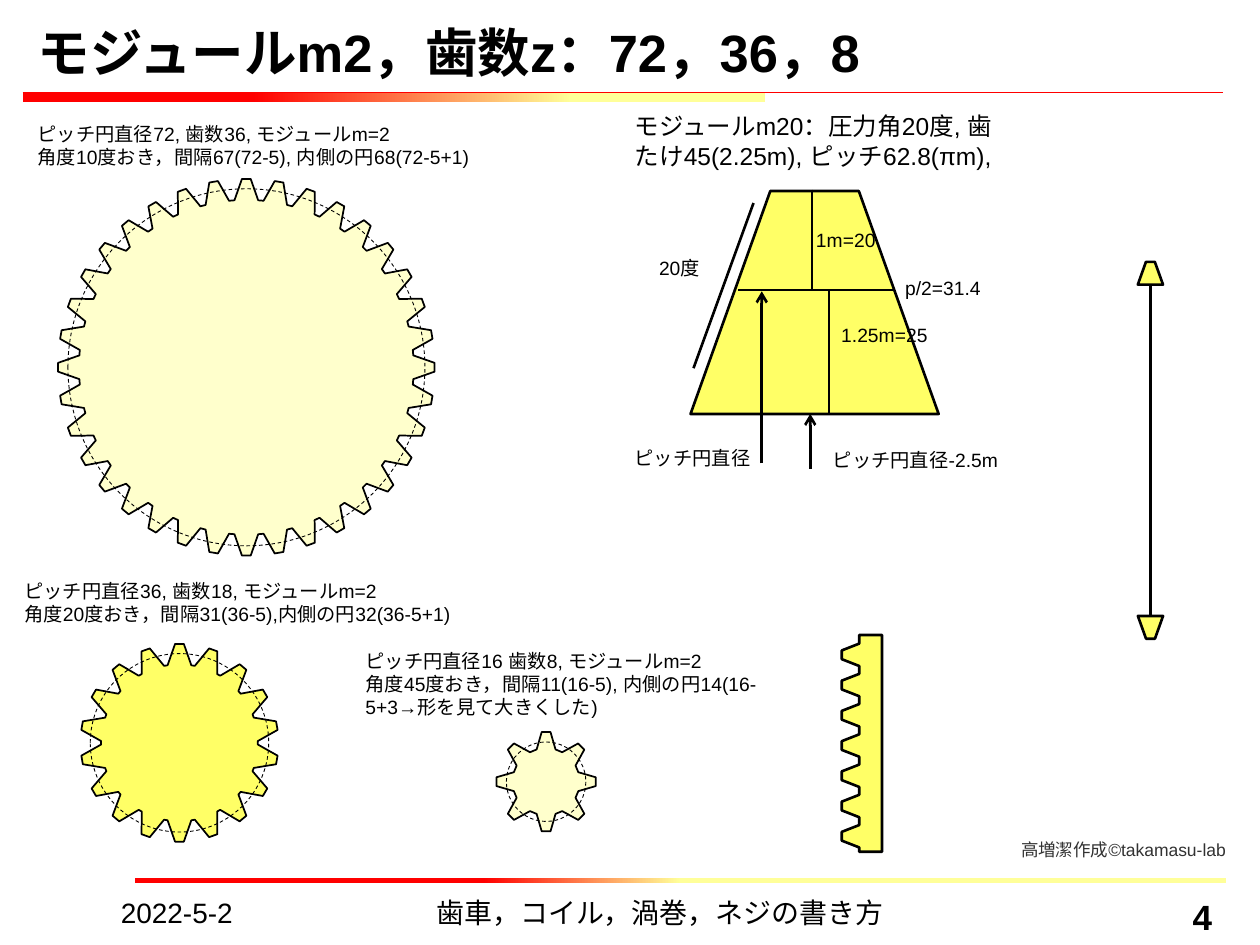
"""Build a slide on drawing gears and a rack from module and tooth count."""
from dataclasses import dataclass
from math import cos, pi, sin

import lxml.etree
import pptx
import pptx.dml.color
import pptx.enum.dml
import pptx.enum.shapes
import pptx.enum.text
import pptx.oxml.ns
import pptx.util

Pt = pptx.util.Pt
Color = pptx.dml.color.RGBColor
Form = pptx.enum.shapes.MSO_SHAPE
Align = pptx.enum.text.PP_ALIGN
Shapes = pptx.shapes.shapetree.SlideShapes
Shape = pptx.shapes.autoshape.Shape

BLACK = Color(0x00, 0x00, 0x00)
GRAY = Color(0x32, 0x32, 0x32)
RED = Color(0xFF, 0x00, 0x00)
PALE = Color(0xFF, 0xFF, 0xCC)
YELLOW = Color(0xFF, 0xFF, 0x66)
CREAM = Color(0xFF, 0xFF, 0x99)
FONT = "Arial"


@dataclass
class Box:
    left: float
    top: float
    width: float
    height: float

    def emu(self) -> list[int]:
        return [Pt(v) for v in (self.left, self.top, self.width, self.height)]


@dataclass
class Label:
    text: str
    box: Box
    size: float = 11
    pad: float = 2.9
    align: Align = Align.LEFT
    bold: bool = False
    color: Color = BLACK


@dataclass
class Line:
    x1: float
    y1: float
    x2: float
    y2: float
    arrow: bool = False
    color: Color = BLACK
    weight: float = 1.5


@dataclass
class Gear:
    x: float
    y: float
    teeth: int
    tip: float
    root: float
    foot: float
    pitch: float
    fill: Color


@dataclass
class Bar:
    box: Box
    start: float
    end: float


BARS = [Bar(Box(77, 501.8, 623.5, 3), 0.32, 0.5),
        Bar(Box(13, 53, 424, 5.5), 0.31, 0.74)]

GEARS = [Gear(140.8, 209.9, 36, 107.6, 95.4, 6.8, 102, PALE),
         Gear(102.6, 424.5, 18, 56.5, 44.3, 6.8, 51, YELLOW),
         Gear(312.1, 446.7, 8, 28.4, 18.4, 5.4, 22.7, PALE)]

TOOTH = Box(394.6, 109.2, 141.8, 127.4)
TIPS = [(Box(650.2, 149.6, 14.4, 13), 0), (Box(650.2, 352, 14.4, 13), 180)]

LINES = [Line(13, 53, 699, 53, color=RED, weight=0.75),
         Line(430.6, 116, 396.3, 210.4),
         Line(421.9, 165.8, 510.7, 165.8),
         Line(463.9, 108.4, 463.9, 165.2, weight=1.25),
         Line(473.8, 165.2, 473.8, 236.2),
         Line(435.3, 264.8, 435.3, 166.5, True),
         Line(463, 267.8, 463, 236.5, True),
         Line(657.4, 162.7, 657.4, 352)]

LABELS = [
    Label("ピッチ円直径72, 歯数36, モジュールm=2\n"
          "角度10度おき，間隔67(72-5), 内側の円68(72-5+1)",
          Box(18.6, 67, 263.5, 32.4)),
    Label("モジュールm20：圧力角20度, 歯たけ45(2.25m), ピッチ62.8(πm),",
          Box(359.8, 60.8, 219, 39.6), 14),
    Label("1m=20", Box(463.4, 127.8, 48.2, 18.7)),
    Label("1.25m=25", Box(477.8, 182, 70.6, 18.7)),
    Label("20度", Box(373.7, 143.6, 35.3, 18.7)),
    Label("p/2=31.4", Box(514.3, 154.8, 56.9, 18.7)),
    Label("ピッチ円直径", Box(359.8, 252, 80, 18.7)),
    Label("ピッチ円直径-2.5m", Box(473, 253.2, 105.8, 18.7)),
    Label("ピッチ円直径36, 歯数18, モジュールm=2\n"
          "角度20度おき，間隔31(36-5),内側の円32(36-5+1)",
          Box(11, 328.2, 256.3, 32.4)),
    Label("ピッチ円直径16 歯数8, モジュールm=2\n"
          "角度45度おき，間隔11(16-5), 内側の円14(16-5+3→形を見て大きくした)",
          Box(206, 368, 256.3, 45.4)),
    Label("高増潔作成©takamasu-lab", Box(576.4, 476, 140, 19.4), 10, 7.2,
          color=GRAY),
    Label("2022-5-2", Box(62, 508.4, 101.5, 21.6), 16, 7.2),
    Label("歯車，コイル，渦巻，ネジの書き方", Box(190, 508.4, 374.4, 21), 16, 7.2,
          Align.CENTER),
    Label("4", Box(581, 508.4, 118.8, 21), 20, 7.2, Align.RIGHT, True),
]


def style(shape: Shape, fill: Color | None, weight: float) -> None:
    shape.shadow.inherit = False
    if fill is None:
        shape.fill.background()
    else:
        shape.fill.solid()
        shape.fill.fore_color.rgb = fill
    shape.line.color.rgb = BLACK
    shape.line.width = Pt(weight)


def draw_bar(shapes: Shapes, bar: Bar) -> None:
    shape = shapes.add_shape(Form.RECTANGLE, *bar.box.emu())
    shape.shadow.inherit = False
    shape.line.fill.background()
    shape.fill.gradient()
    shape.fill.gradient_angle = 0
    ends = ((RED, bar.start), (CREAM, bar.end))
    for stop, (color, place) in zip(shape.fill.gradient_stops, ends):
        stop.color.rgb = color
        stop.position = place


def draw_path(shapes: Shapes, dots: list[tuple[float, float]],
              fill: Color, weight: float) -> None:
    first, *rest = [(Pt(x), Pt(y)) for x, y in dots]
    path = shapes.build_freeform(*first)
    path.add_line_segments(rest, close=True)
    style(path.convert_to_shape(), fill, weight)


def draw_gear(shapes: Shapes, gear: Gear) -> None:
    tooth = [(-gear.foot, gear.root), (-2.5, gear.tip),
             (2.5, gear.tip), (gear.foot, gear.root)]
    dots = []
    for i in range(gear.teeth):
        turn = 2 * pi * i / gear.teeth
        dots += [(gear.x + x * cos(turn) + y * sin(turn),
                  gear.y + x * sin(turn) - y * cos(turn)) for x, y in tooth]
    draw_path(shapes, dots, gear.fill, 1)


def draw_pitch(shapes: Shapes, gear: Gear) -> None:
    r = gear.pitch
    box = Box(gear.x - r, gear.y - r, 2 * r, 2 * r)
    ring = shapes.add_shape(Form.OVAL, *box.emu())
    style(ring, None, 0.5)
    ring.line.dash_style = pptx.enum.dml.MSO_LINE.DASH


def draw_rack(shapes: Shapes) -> None:
    dots = [(491, 486.7), (504, 486.7), (504, 362.9), (491, 362.9)]
    for i in range(7):
        y = 374.2 + 17.28 * i
        dots += [(491, y - 6.4), (481, y - 2.5), (481, y + 2.5), (491, y + 6.4)]
    draw_path(shapes, dots, YELLOW, 1.5)


def draw_tooth(shapes: Shapes, box: Box, turn: float = 0) -> None:
    shape = shapes.add_shape(Form.TRAPEZOID, *box.emu())
    shape.adjustments[0] = 0.358
    shape.rotation = turn
    style(shape, YELLOW, 1.5)


def draw_line(shapes: Shapes, line: Line) -> None:
    ends = [Pt(v) for v in (line.x1, line.y1, line.x2, line.y2)]
    link = shapes.add_connector(pptx.enum.shapes.MSO_CONNECTOR.STRAIGHT, *ends)
    link.line.color.rgb = line.color
    link.line.width = Pt(line.weight)
    qn = pptx.oxml.ns.qn
    props = link._element.spPr
    if line.arrow:
        lxml.etree.SubElement(props.find(qn("a:ln")), qn("a:tailEnd"), type="arrow")
    lxml.etree.SubElement(props, qn("a:effectLst"))


def write(shape: Shape, label: Label) -> None:
    frame = shape.text_frame
    frame.word_wrap = True
    frame.auto_size = pptx.enum.text.MSO_AUTO_SIZE.NONE
    frame.margin_left = frame.margin_right = Pt(label.pad)
    frame.margin_top = frame.margin_bottom = Pt(min(label.pad, 3.6))
    frame.text = label.text
    for para in frame.paragraphs:
        para.alignment = label.align
        para.font.name = FONT
        para.font.size = Pt(label.size)
        para.font.bold = label.bold
        para.font.color.rgb = label.color


def main() -> None:
    deck = pptx.Presentation()
    deck.slide_width, deck.slide_height = Pt(720), Pt(540)
    slide = deck.slides.add_slide(deck.slide_layouts[5])
    shapes = slide.shapes
    head = Label("モジュールm2，歯数z：72，36，8", Box(14.4, 15.1, 686, 36), 30, 7.2,
                 bold=True)
    title = shapes.title
    title.left, title.top, title.width, title.height = head.box.emu()
    write(title, head)
    title.text_frame.vertical_anchor = pptx.enum.text.MSO_ANCHOR.BOTTOM
    for bar in BARS:
        draw_bar(shapes, bar)
    draw_tooth(shapes, TOOTH)
    for box, turn in TIPS:
        draw_tooth(shapes, box, turn)
    for gear in GEARS:
        draw_gear(shapes, gear)
        draw_pitch(shapes, gear)
    draw_rack(shapes)
    for line in LINES:
        draw_line(shapes, line)
    for label in LABELS:
        write(shapes.add_textbox(*label.box.emu()), label)
    deck.save("out.pptx")


if __name__ == "__main__":
    main()
